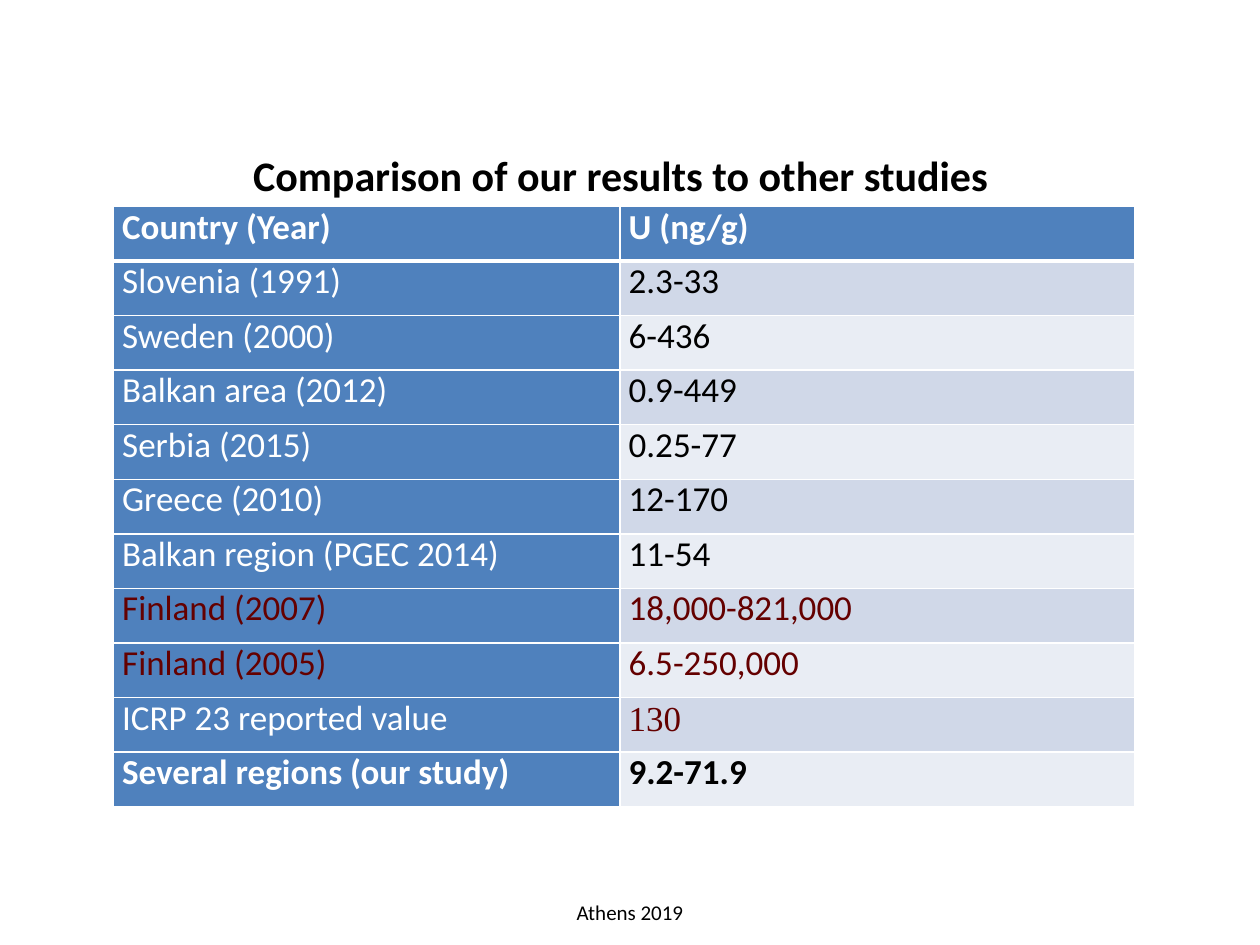
from lxml.etree import SubElement
from pptx import Presentation
from pptx.dml.color import RGBColor
from pptx.enum.text import MSO_ANCHOR, PP_ALIGN
from pptx.oxml.ns import qn
from pptx.util import Inches, Pt

WHITE, BLACK, BLUE, DARK_RED = "FFFFFF", "000000", "4F81BD", "640000"
BANDS = ("D0D8E8", "E9EDF4")
BODY_FONT, SERIF_FONT = "Calibri", "Times New Roman"

HEADINGS = ("Country (Year)", "U (ng/g)")
STUDIES = [
    ("Slovenia (1991)", "2.3-33"),
    ("Sweden (2000)", "6-436"),
    ("Balkan area (2012)", "0.9-449"),
    ("Serbia (2015)", "0.25-77"),
    ("Greece (2010)", "12-170"),
    ("Balkan region (PGEC 2014)", "11-54"),
    ("Finland (2007)", "18,000-821,000"),
    ("Finland (2005)", "6.5-250,000"),
    ("ICRP 23 reported value", "130"),
    ("Several regions (our study)", "9.2-71.9"),
]
COUNTRY_SHARE = 4.02 / 8.11


def color(hex_code):
    return RGBColor.from_string(hex_code)


def style(paragraph, size, hex_code, bold=False, font_name=BODY_FONT):
    for run in paragraph.runs:
        run.font.size = Pt(size)
        run.font.name = font_name
        run.font.bold = bold
        run.font.color.rgb = color(hex_code)


def add_label(slide, box, text, size, bold=False, wrap=True, align=PP_ALIGN.LEFT):
    frame = slide.shapes.add_textbox(*map(Inches, box)).text_frame
    frame.word_wrap = wrap
    frame.text = text
    frame.paragraphs[0].alignment = align
    style(frame.paragraphs[0], size, BLACK, bold)


def set_borders(cell, top=1, bottom=1):
    """Draw white cell borders; the lines must precede the fill in the XML."""
    properties = cell._tc.get_or_add_tcPr()
    for side, width in (("L", 1), ("R", 1), ("T", top), ("B", bottom)):
        line = SubElement(properties, qn(f"a:ln{side}"), w=str(Pt(width)))
        fill = SubElement(line, qn("a:solidFill"))
        SubElement(fill, qn("a:srgbClr"), val=WHITE)


def fill_cell(cell, text, background, hex_code, bold, font_name):
    cell.margin_left = cell.margin_right = Inches(0.07)
    cell.margin_top = cell.margin_bottom = 0
    cell.vertical_anchor = MSO_ANCHOR.MIDDLE
    cell.fill.solid()
    cell.fill.fore_color.rgb = color(background)
    cell.text = text
    paragraph = cell.text_frame.paragraphs[0]
    paragraph.line_spacing = Pt(17)
    style(paragraph, 20, hex_code, bold, font_name)


def add_studies_table(slide, box):
    rows = [HEADINGS, *STUDIES]
    left, top, width, height = map(Inches, box)
    table = slide.shapes.add_table(len(rows), 2, left, top, width, height).table
    table.columns[0].width = int(width * COUNTRY_SHARE)
    table.columns[1].width = width - table.columns[0].width
    for index, texts in enumerate(rows):
        table.rows[index].height = height // len(rows)
        heading = index == 0
        bold = heading or index == len(rows) - 1
        for column, text in enumerate(texts):
            on_blue = heading or column == 0
            red = texts[0].startswith("Finland") or text == "130"
            cell = table.cell(index, column)
            set_borders(cell, top=3 if index == 1 else 1, bottom=3 if heading else 1)
            fill_cell(
                cell,
                text,
                background=BLUE if on_blue else BANDS[(index - 1) % 2],
                hex_code=DARK_RED if red else WHITE if on_blue else BLACK,
                bold=bold,
                font_name=SERIF_FONT if text == "130" else BODY_FONT,
            )


def main():
    presentation = Presentation()
    presentation.slide_width, presentation.slide_height = Inches(10), Inches(7.5)
    slide = presentation.slides.add_slide(presentation.slide_layouts[6])
    add_label(slide, (4.47, 7.09, 1.06, 0.3), "Athens 2019", 12,
              wrap=False, align=PP_ALIGN.CENTER)
    add_label(slide, (1.91, 1.14, 6.08, 0.5),
              "Comparison of our results to other studies", 24, bold=True)
    add_studies_table(slide, (0.9, 1.64, 8.11, 4.76))
    presentation.save("out.pptx")


if __name__ == "__main__":
    main()
